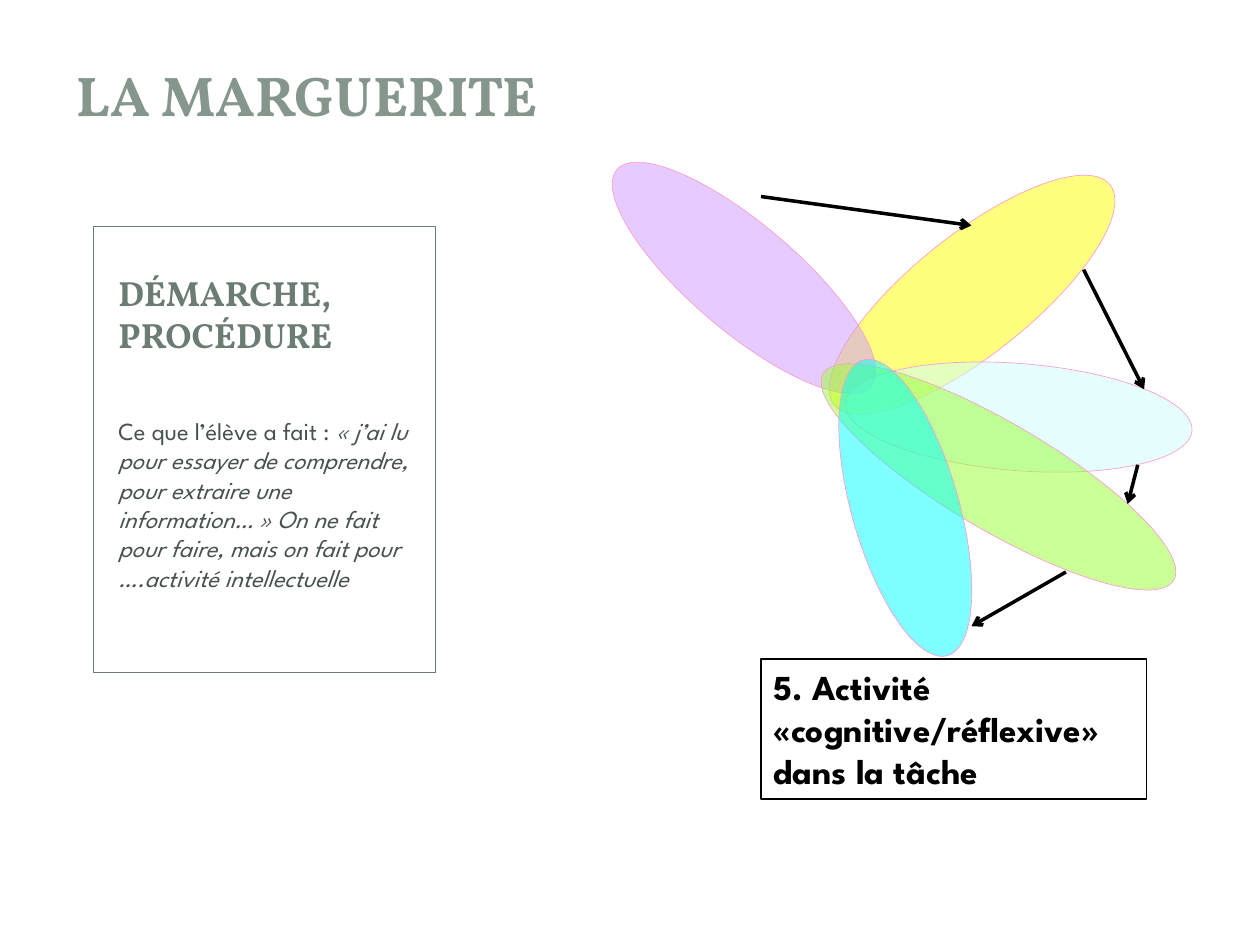
import pptx
import pptx.dml.color
import pptx.enum.shapes
import pptx.enum.text
import pptx.oxml.ns
import pptx.util
from lxml import etree

Inches = pptx.util.Inches
qn = pptx.oxml.ns.qn
SHAPES = pptx.enum.shapes.MSO_SHAPE
ANCHOR = pptx.enum.text.MSO_ANCHOR

HEADING = "LA MARGUERITE"
STEP_TITLE = "DÉMARCHE, PROCÉDURE"
STEP_INTRO = "Ce que l’élève a fait : "
STEP_QUOTE = ("«\u00a0j’ai lu pour essayer de comprendre, pour extraire une "
              "information…\u00a0» On ne fait pour faire, mais on fait pour "
              "….activité intellectuelle")
PETAL_LABEL = "5. Activité «cognitive/réflexive» dans la tâche"

# left, top, width, height, rotation, colour
PETALS = [
    (7.24, 0.94, 0.95, 2.80, 51.4, "FFFF00"),
    (5.48, 0.88, 0.85, 2.65, 310.4, "CC99FF"),
    (7.66, 1.93, 0.85, 2.76, 274.5, "CCFFFF"),
    (7.50, 2.17, 0.85, 3.23, 300.5, "99FF33"),
    (6.76, 2.81, 0.85, 2.44, 344.1, "00FFFF"),
]
# start x, start y, end x, end y
ARROWS = [
    (6.04, 1.56, 7.71, 1.79),
    (8.60, 2.14, 9.08, 3.09),
    (9.03, 3.69, 8.95, 4.00),
    (8.46, 4.54, 7.71, 4.97),
]
THEME = {
    "serif": "Vollkorn", "sans": "League Spartan",
    "heading": "85968C", "accent": "6B7D72", "body": "47534C",
    "ink": "000000", "petal_line": "FF99CC",
    "heading_size": 32, "title_size": 20, "body_size": 14,
}


def rgb(value):
    return pptx.dml.color.RGBColor.from_string(value)


def place(part, left, top, width, height):
    part.left, part.top = Inches(left), Inches(top)
    part.width, part.height = Inches(width), Inches(height)


def write(part, *texts, font, size, color, bold=False, italics=(),
          anchor=ANCHOR.TOP, before=0, bottom=0.05):
    """Fill a part with one left-aligned paragraph, one run per text."""
    frame = part.text_frame
    frame.word_wrap = True
    frame.auto_size = pptx.enum.text.MSO_AUTO_SIZE.NONE
    frame.vertical_anchor = anchor
    frame.margin_bottom = Inches(bottom)
    paragraph = frame.paragraphs[0]
    paragraph.alignment = pptx.enum.text.PP_ALIGN.LEFT
    paragraph.space_before = pptx.util.Pt(before)
    for number, text in enumerate(texts):
        run = paragraph.add_run()
        run.text = text
        run.font.name = font
        run.font.size = pptx.util.Pt(size)
        run.font.bold = bold
        run.font.italic = number in italics
        run.font.color.rgb = rgb(color)
    return paragraph


def add_outline(slide, preset, box, line, weight, fill=None, opacity=100):
    shape = slide.shapes.add_shape(preset, *map(Inches, box))
    shape.shadow.inherit = False
    shape.line.color.rgb = rgb(line)
    shape.line.width = pptx.util.Pt(weight)
    if fill is None:
        shape.fill.background()
    else:
        shape.fill.solid()
        shape.fill.fore_color.rgb = rgb(fill)
        color = shape.fill._xPr.find(".//" + qn("a:srgbClr"))
        etree.SubElement(color, qn("a:alpha"), val=str(opacity * 1000))
    return shape


def add_arrow(slide, points):
    arrow = slide.shapes.add_connector(
        pptx.enum.shapes.MSO_CONNECTOR.STRAIGHT, *map(Inches, points))
    arrow.line.color.rgb = rgb(THEME["ink"])
    arrow.line.width = pptx.util.Pt(2)
    etree.SubElement(arrow.line._get_or_add_ln(), qn("a:tailEnd"), type="arrow")
    etree.SubElement(arrow._element.spPr, qn("a:effectLst"))


def main():
    deck = pptx.Presentation()
    deck.slide_width, deck.slide_height = Inches(10), Inches(7.5)
    slide = deck.slides.add_slide(deck.slide_layouts[1])

    add_outline(slide, SHAPES.RECTANGLE, (0.74, 1.8, 2.72, 3.54),
                THEME["accent"], 0.5)

    step_title, step_body = slide.placeholders
    place(step_title, 0.84, 1.9, 2.51, 1.3)
    write(step_title, STEP_TITLE, font=THEME["serif"], size=THEME["title_size"],
          color=THEME["accent"], bold=True, anchor=ANCHOR.BOTTOM, bottom=0.38)
    place(step_body, 0.84, 3.25, 2.51, 1.92)
    paragraph = write(step_body, STEP_INTRO, STEP_QUOTE, font=THEME["sans"],
                      size=THEME["body_size"], color=THEME["body"],
                      italics=(1,), before=4)
    properties = paragraph._p.get_or_add_pPr()
    properties.set("marL", "0")
    properties.set("indent", "0")
    etree.SubElement(properties, qn("a:buNone"))

    petal_label = add_outline(slide, SHAPES.RECTANGLE, (6.04, 5.23, 3.06, 1.11),
                              THEME["ink"], 1)
    write(petal_label, PETAL_LABEL, font=THEME["sans"],
          size=THEME["title_size"], color=THEME["ink"], bold=True)

    for *box, rotation, color in PETALS:
        petal = add_outline(slide, SHAPES.OVAL, box, THEME["petal_line"], 0.37,
                            fill=color, opacity=50)
        petal.rotation = rotation

    heading = slide.shapes.add_textbox(*map(Inches, (0.51, 0.43, 4.65, 0.64)))
    write(heading, HEADING, font=THEME["serif"], size=THEME["heading_size"],
          color=THEME["heading"], bold=True)

    for points in ARROWS:
        add_arrow(slide, points)

    deck.save("out.pptx")


if __name__ == "__main__":
    main()
